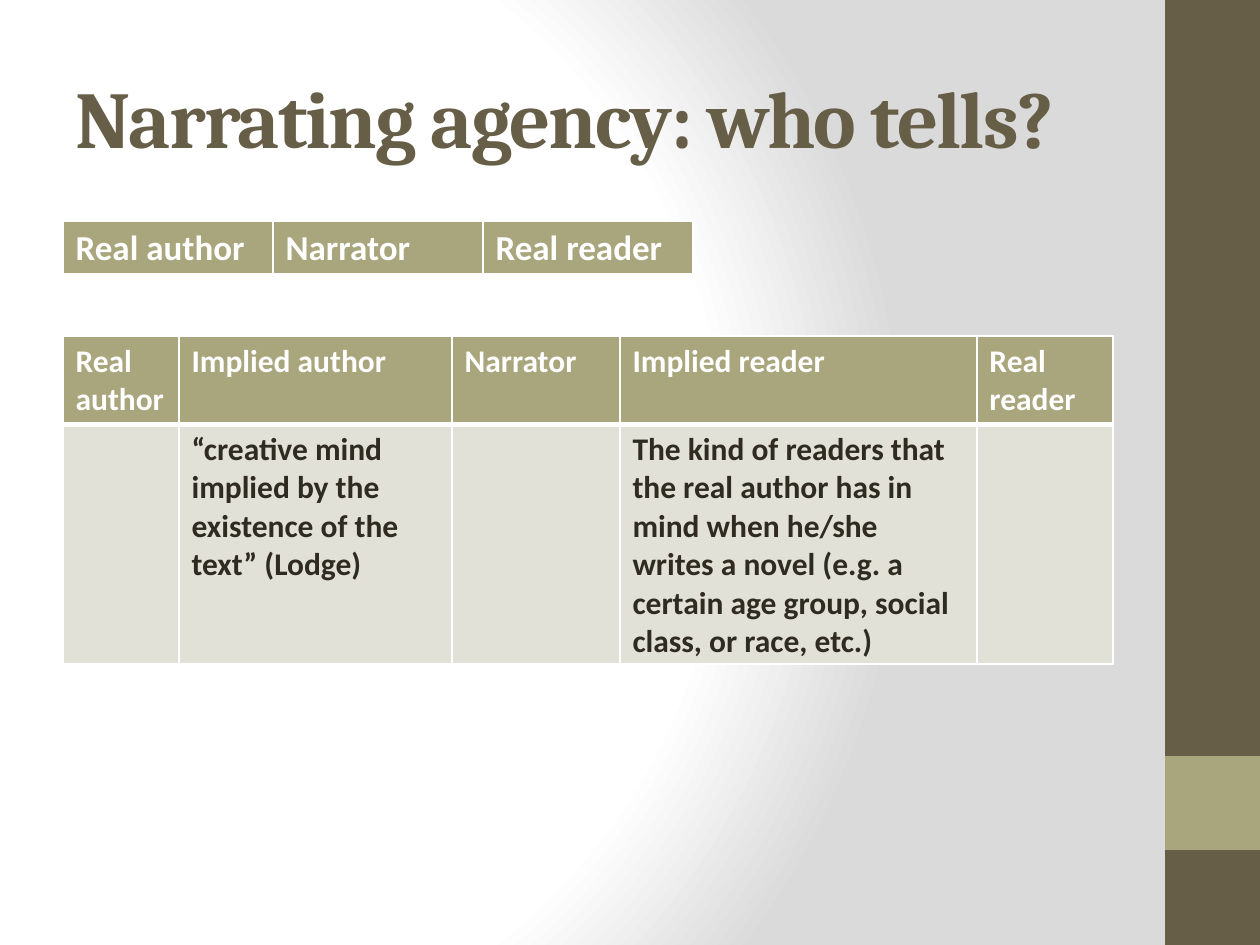
from pptx import Presentation
from pptx.dml.color import RGBColor
from pptx.enum.shapes import MSO_SHAPE
from pptx.enum.text import MSO_ANCHOR
from pptx.oxml import parse_xml
from pptx.oxml.ns import nsdecls
from pptx.util import Emu, Pt

BROWN = RGBColor(0x67, 0x5E, 0x47)
OLIVE = RGBColor(0xA9, 0xA5, 0x7C)
PALE = RGBColor(0xE2, 0xE1, 0xD7)
DARK = RGBColor(0x2F, 0x2B, 0x20)
WHITE = RGBColor(0xFF, 0xFF, 0xFF)
GREY = RGBColor(0xDA, 0xDA, 0xDA)

TITLE = "Narrating agency: who tells?"
BACKGROUND_STOPS = [(0, WHITE), (75, WHITE), (100, GREY)]
BANDS = [((1165, 0, 95, 945), BROWN), ((1165, 756, 95, 94), OLIVE)]
TABLES = [
    {
        "at": (63, 336),
        "cols": [116, 273, 168, 357, 136],
        "rows": [88, 240],
        "size": 18,
        "cells": [
            ["Real author", "Implied author", "Narrator", "Implied reader", "Real reader"],
            [
                "",
                "“creative mind implied by the existence of the text” (Lodge)",
                "",
                "The kind of readers that the real author has in mind when he/she "
                "writes a novel (e.g. a certain age group, social class, or race, etc.)",
                "",
            ],
        ],
    },
    {
        "at": (63, 221),
        "cols": [210, 210, 210],
        "rows": [54],
        "size": 20,
        "cells": [["Real author", "Narrator", "Real reader"]],
    },
]


def px(n):
    return Emu(round(n * 914400 / 126))


def set_background(s):
    s.background.fill.solid()
    old = s.element.xpath(".//p:bgPr/a:solidFill")[0]
    stops = "".join(
        f'<a:gs pos="{pos * 1000}"><a:srgbClr val="{color}"/></a:gs>'
        for pos, color in BACKGROUND_STOPS
    )
    old.getparent().replace(old, parse_xml(
        f'<a:gradFill {nsdecls("a")} rotWithShape="1"><a:gsLst>{stops}</a:gsLst>'
        '<a:path path="circle"><a:fillToRect l="20000" t="50000" r="100000" b="50000"/>'
        '</a:path></a:gradFill>'
    ))


def add_run(p, text, **fmt):
    r = p.add_run()
    r.text = text
    color = fmt.pop("color")
    for key, value in fmt.items():
        setattr(r.font, key, value)
    r.font.color.rgb = color
    return r


def set_borders(cell, widths):
    tc_pr = cell._tc.get_or_add_tcPr()
    for side, width in widths.items():
        tc_pr.append(parse_xml(
            f'<a:ln{side} {nsdecls("a")} w="{Pt(width)}"><a:solidFill>'
            f'<a:srgbClr val="{WHITE}"/></a:solidFill></a:ln{side}>'
        ))


def add_table(s, data):
    cols, rows = data["cols"], data["rows"]
    box = (*data["at"], sum(cols), sum(rows))
    table = s.shapes.add_table(len(rows), len(cols), *map(px, box)).table
    for col, width in zip(table.columns, cols):
        col.width = px(width)
    for i, (row, height) in enumerate(zip(table.rows, rows)):
        row.height = px(height)
        header = i == 0
        for cell, text in zip(row.cells, data["cells"][i]):
            set_borders(cell, {"L": 1, "R": 1, "T": 1 if header else 3, "B": 3 if header else 1})
            cell.fill.solid()
            cell.fill.fore_color.rgb = OLIVE if header else PALE
            if text:
                add_run(cell.text_frame.paragraphs[0], text, name="Calibri",
                        size=Pt(data["size"]), bold=True, color=WHITE if header else DARK)


def main():
    prs = Presentation()
    prs.slide_width, prs.slide_height = px(1260), px(945)
    s = prs.slides.add_slide(prs.slide_layouts[6])
    set_background(s)

    for box, color in BANDS:
        sp = s.shapes.add_shape(MSO_SHAPE.RECTANGLE, *map(px, box))
        sp.shadow.inherit = False
        sp.fill.solid()
        sp.fill.fore_color.rgb = color
        sp.line.fill.background()

    tf = s.shapes.add_textbox(*map(px, (63, 38, 1050, 157))).text_frame
    tf.word_wrap = True
    tf.vertical_anchor = MSO_ANCHOR.MIDDLE
    r = add_run(tf.paragraphs[0], TITLE, name="Cambria", size=Pt(46), bold=True, color=BROWN)
    r.font._element.set("spc", "-100")

    for data in TABLES:
        add_table(s, data)
    prs.save("out.pptx")


if __name__ == "__main__":
    main()
